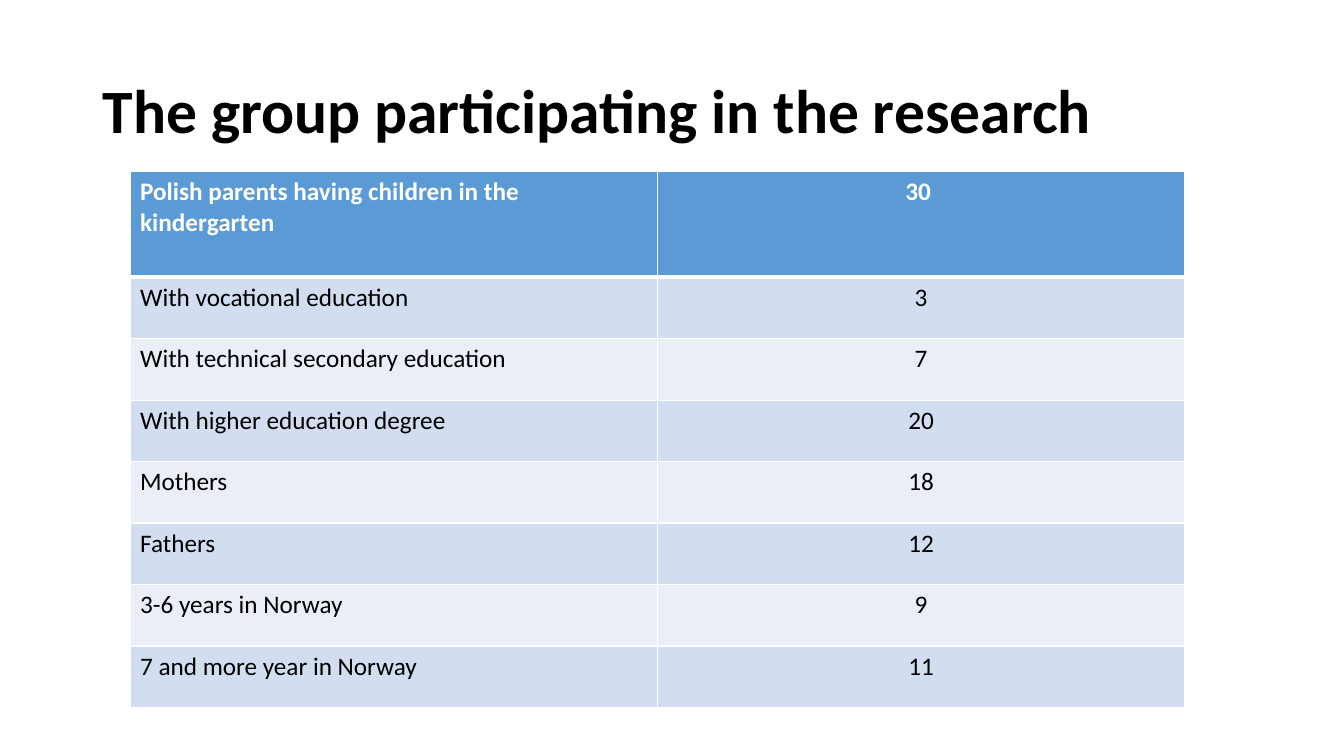
import pptx
import pptx.dml.color
import pptx.enum.text
import pptx.oxml
import pptx.oxml.ns
import pptx.util
from pptx.util import Inches

RGBColor = pptx.dml.color.RGBColor
ALIGN = pptx.enum.text.PP_ALIGN
BLACK = RGBColor(0x00, 0x00, 0x00)
WHITE = RGBColor(0xFF, 0xFF, 0xFF)
HEADER = RGBColor(0x5B, 0x9B, 0xD5)
BANDS = [RGBColor(0xEA, 0xEF, 0xF7), RGBColor(0xD2, 0xDE, 0xEF)]
FONT = "Calibri"

GROUPS = [
    ("Polish parents having children in the kindergarten", "30 "),
    ("With vocational education", "3"),
    ("With technical secondary education", "7"),
    ("With higher education degree", "20"),
    ("Mothers", "18"),
    ("Fathers", "12"),
    ("3-6 years in Norway", "9"),
    ("7 and more year in Norway", "11"),
]


def add_run(p, text, size, color, bold):
    """Add one formatted run to a paragraph."""
    r = p.add_run()
    r.text = text
    r.font.name = FONT
    r.font.size = pptx.util.Pt(size)
    r.font.bold = bold
    r.font.color.rgb = color


def add_title(s, text):
    """Add the slide title as a vertically centred text box."""
    sp = s.shapes.add_textbox(Inches(0.92), Inches(0.4), Inches(11.5), Inches(1.45))
    tf = sp.text_frame
    tf.word_wrap = True
    tf.vertical_anchor = pptx.enum.text.MSO_ANCHOR.MIDDLE
    p = tf.paragraphs[0]
    p.line_spacing = 0.9
    add_run(p, text, 44, BLACK, True)


def set_border(cell, side, width):
    """Draw a solid white line on one side of a cell."""
    cell._tc.get_or_add_tcPr().append(pptx.oxml.parse_xml(
        f'<a:ln{side} {pptx.oxml.ns.nsdecls("a")} w="{pptx.util.Pt(width)}">'
        f'<a:solidFill><a:srgbClr val="{WHITE}"/></a:solidFill></a:ln{side}>'))


def fill_cell(cell, text, row, col):
    """Write and style one cell according to its row and column."""
    is_header = row == 0
    for side in "LRTB":
        thick = (is_header and side == "B") or (row == 1 and side == "T")
        set_border(cell, side, 3 if thick else 1)
    cell.fill.solid()
    cell.fill.fore_color.rgb = HEADER if is_header else BANDS[row % 2]
    p = cell.text_frame.paragraphs[0]
    p.alignment = ALIGN.CENTER if col else ALIGN.LEFT
    add_run(p, text, 18, WHITE if is_header else BLACK, is_header)


def add_group_table(s, groups):
    """Add the table of participant groups and their counts."""
    table = s.shapes.add_table(len(groups), 2, Inches(1.29), Inches(1.7),
                               Inches(10.46), Inches(5.32)).table
    for i, group in enumerate(groups):
        table.rows[i].height = Inches(0.61 if i else 1.05)
        for j, text in enumerate(group):
            fill_cell(table.cell(i, j), text, i, j)


def main():
    """Build the slide and save it."""
    prs = pptx.Presentation()
    prs.slide_width = Inches(13.33)
    prs.slide_height = Inches(7.5)
    s = prs.slides.add_slide(prs.slide_layouts[6])
    add_title(s, "The group participating in the research")
    add_group_table(s, GROUPS)
    prs.save("out.pptx")


if __name__ == "__main__":
    main()
